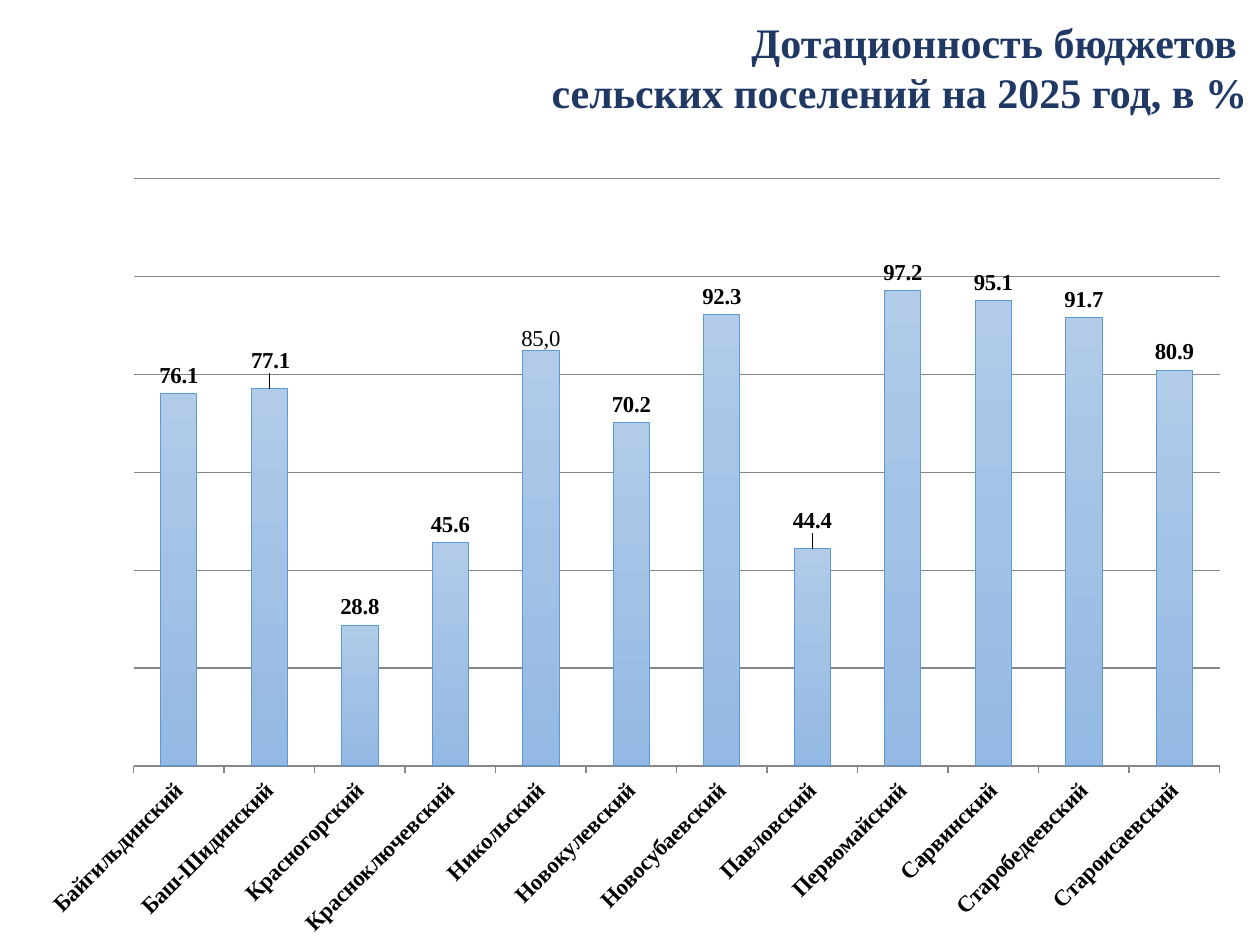
from dataclasses import dataclass

from lxml.etree import SubElement
from pptx import Presentation
from pptx.chart.data import CategoryChartData
from pptx.dml.color import RGBColor
from pptx.enum.chart import XL_CHART_TYPE as ChartType
from pptx.enum.chart import XL_LABEL_POSITION as LabelPosition
from pptx.enum.chart import XL_TICK_MARK as TickMark
from pptx.enum.text import MSO_ANCHOR as Anchor
from pptx.enum.text import PP_ALIGN as Align
from pptx.oxml import parse_xml
from pptx.oxml.ns import nsdecls, qn
from pptx.util import Inches, Pt

TITLE_LINES = ["Дотационность бюджетов ", "сельских поселений на 2025 год, в %"]
SUBSIDY_SHARES = {
    "Байгильдинский": 76.1,
    "Баш-Шидинский": 77.1,
    "Красногорский": 28.8,
    "Красноключевский": 45.6,
    "Никольский": 85.0,
    "Новокулевский": 70.2,
    "Новосубаевский": 92.3,
    "Павловский": 44.4,
    "Первомайский": 97.2,
    "Сарвинский": 95.1,
    "Старобедеевский": 91.7,
    "Староисаевский": 80.9,
}
# Label shifts from their usual place, in inches: right, down
LABEL_SHIFTS = {
    "Баш-Шидинский": (0.01, -0.08),
    "Никольский": (0, 0.05),
    "Павловский": (0, -0.08),
}
CUSTOM_LABELS = {"Никольский": "85,0"}
CHART_EXTENSION = "http://schemas.microsoft.com/office/drawing/2012/chart"


@dataclass(frozen=True)
class Theme:
    font: str = "Times New Roman"
    chart_font: str = "Calibri"
    title_color: str = "203864"
    text_color: str = "000000"
    grid_color: str = "868686"
    bar_line: str = "5B9BD5"
    bar_stops: tuple = ((0, "B1CBE9"), (50, "A3C1E5"), (100, "93B9E4"))
    title_size: int = 24
    chart_size: int = 18
    label_size: int = 13


class SlideBuilder:
    def __init__(self, presentation, theme):
        self.theme = theme
        self.slide = presentation.slides.add_slide(presentation.slide_layouts[5])

    def set_font(self, font, size, color, bold=True, name=None):
        font.name = name or self.theme.font
        font.size = Pt(size)
        font.bold = bold
        font.color.rgb = RGBColor.from_string(color)

    def add_title(self, lines, left, top, width, height):
        title = self.slide.shapes.title
        title.left, title.top, title.width, title.height = map(
            Inches, (left, top, width, height))
        frame = title.text_frame
        frame.word_wrap = True
        frame.vertical_anchor = Anchor.TOP
        for index, line in enumerate(lines):
            paragraph = frame.add_paragraph() if index else frame.paragraphs[0]
            paragraph.alignment = Align.RIGHT
            run = paragraph.add_run()
            run.text = line
            self.set_font(run.font, self.theme.title_size, self.theme.title_color)

    def add_column_chart(self, values, left, top, width, height):
        data = CategoryChartData(number_format="0.0")
        data.categories = list(values)
        data.add_series("Series 1", list(values.values()))
        frame = self.slide.shapes.add_chart(
            ChartType.COLUMN_CLUSTERED,
            *map(Inches, (left, top, width, height)), data)
        chart = frame.chart
        chart.has_title = False
        chart.has_legend = False
        self.set_font(chart.font, self.theme.chart_size, self.theme.text_color,
                      bold=False, name=self.theme.chart_font)
        plot = chart.plots[0]
        plot.gap_width = 150
        plot.vary_by_categories = False
        self.format_axes(chart)
        self.format_bars(plot.series[0])
        self.format_labels(plot.series[0], list(values), frame)
        plot_area = chart._chartSpace.chart.plotArea
        for old_layout in plot_area.findall(qn("c:layout")):
            plot_area.remove(old_layout)
        plot_area.insert(0, self.manual_layout(
            frame, layoutTarget="inner", xMode="edge", yMode="edge",
            x=0.84, y=0.16, w=8.62, h=4.66))

    def format_axes(self, chart):
        grid_color = RGBColor.from_string(self.theme.grid_color)
        value_axis = chart.value_axis
        value_axis.minimum_scale = 0
        value_axis.maximum_scale = 120
        value_axis.major_unit = 20
        value_axis.tick_labels.number_format = "0.0"
        value_axis.tick_labels.number_format_is_linked = False
        value_axis.has_major_gridlines = True
        value_axis.major_gridlines.format.line.color.rgb = grid_color
        value_axis.visible = False

        category_axis = chart.category_axis
        category_axis.major_tick_mark = TickMark.OUTSIDE
        category_axis.format.line.color.rgb = grid_color
        self.set_font(category_axis.tick_labels.font, self.theme.label_size,
                      self.theme.text_color)
        body = category_axis._element.find(qn("c:txPr")).find(qn("a:bodyPr"))
        body.set("rot", str(-45 * 60000))
        body.set("vert", "horz")

    def format_bars(self, series):
        series.format.line.color.rgb = RGBColor.from_string(self.theme.bar_line)
        series.format.line.width = Pt(0.5)
        stops = "".join(
            f'<a:gs pos="{position * 1000}"><a:srgbClr val="{color}"/></a:gs>'
            for position, color in self.theme.bar_stops)
        gradient = parse_xml(
            f'<a:gradFill {nsdecls("a")} rotWithShape="1"><a:gsLst>{stops}</a:gsLst>'
            f'<a:lin ang="{90 * 60000}" scaled="0"/></a:gradFill>')
        series._element.find(qn("c:spPr")).insert(0, gradient)

    def format_labels(self, series, categories, frame):
        labels = series.data_labels
        labels.show_value = True
        labels.number_format = "#,##0.0"
        labels.number_format_is_linked = False
        labels.position = LabelPosition.OUTSIDE_END
        self.set_font(labels.font, self.theme.label_size, self.theme.text_color)
        for category, (right, down) in LABEL_SHIFTS.items():
            label = series.points[categories.index(category)].data_label
            if category in CUSTOM_LABELS:
                run = label.text_frame.paragraphs[0].add_run()
                run.text = CUSTOM_LABELS[category]
                font = run.font
            else:
                font = label.font
            self.set_font(font, self.theme.label_size, self.theme.text_color,
                          bold=category not in CUSTOM_LABELS)
            label.position = LabelPosition.OUTSIDE_END
            label._dLbl.insert(1, self.manual_layout(frame, x=right, y=down))
        self.hide_leader_lines(labels)

    @staticmethod
    def hide_leader_lines(labels):
        labels._element.append(parse_xml(
            f'<c:extLst {nsdecls("c")}>'
            f'<c:ext uri="{{CE6537A1-D6FC-4f65-9D91-7224C49458BB}}" '
            f'xmlns:c15="{CHART_EXTENSION}">'
            '<c15:showLeaderLines val="0"/></c:ext></c:extLst>'))

    @staticmethod
    def manual_layout(frame, **settings):
        """Return a chart layout element; lengths in inches become chart shares."""
        layout = parse_xml(f'<c:layout {nsdecls("c")}><c:manualLayout/></c:layout>')
        extents = {"x": frame.width, "w": frame.width,
                   "y": frame.height, "h": frame.height}
        for name, value in settings.items():
            if name in extents:
                value = Inches(value) / extents[name]
            SubElement(layout[0], qn(f"c:{name}")).set("val", str(value))
        return layout


def main():
    presentation = Presentation()
    presentation.slide_width = Inches(10)
    presentation.slide_height = Inches(7.5)
    builder = SlideBuilder(presentation, Theme())
    builder.add_column_chart(SUBSIDY_SHARES, 0.22, 1.26, 9.5, 6.24)
    builder.add_title(TITLE_LINES, 0.55, 0.08, 9.45, 0.91)
    presentation.save("out.pptx")


if __name__ == "__main__":
    main()
